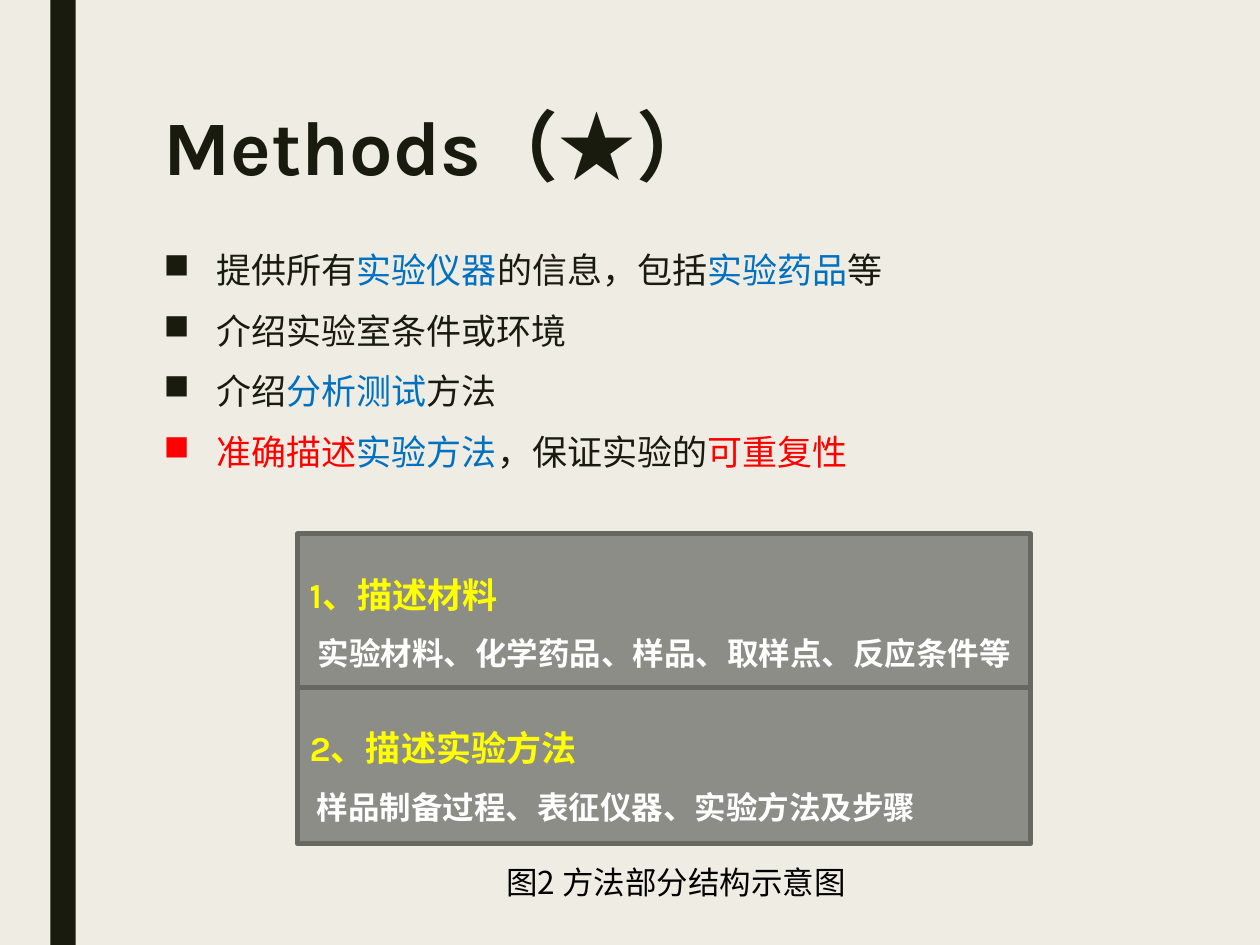
from dataclasses import dataclass

from pptx import Presentation
from pptx.dml.color import RGBColor
from pptx.enum import shapes, text
from pptx.oxml.ns import qn
from pptx.util import Inches, Pt


@dataclass(frozen=True)
class Theme:
    """Hold the colours, fonts and type sizes."""
    back: str = "EFEDE3"
    ink: str = "191B0E"
    blue: str = "0070C0"
    red: str = "FF0000"
    gold: str = "FFFF00"
    white: str = "FFFFFF"
    black: str = "000000"
    panel: str = "8C8D86"
    edge: str = "686863"
    latin: str = "Karla"
    han: str = "Noto Sans CJK SC"
    title: int = 44
    body: int = 20
    note: int = 18


T = Theme()
WIDE, HIGH = 10, 7.5
POINTS = [
    [("提供所有", T.ink), ("实验仪器", T.blue), ("的信息，包括", T.ink),
     ("实验药品", T.blue), ("等", T.ink)],
    [("介绍实验室条件或环境", T.ink)],
    [("介绍", T.ink), ("分析测试", T.blue), ("方法", T.ink)],
    [("准确描述", T.red), ("实验方法", T.blue), ("，保证实验的", T.ink),
     ("可重复性", T.red)],
]
PANELS = [
    ("1、描述材料", "实验材料、化学药品、样品、取样点、反应条件等", text.PP_ALIGN.CENTER),
    ("2、描述实验方法", " 样品制备过程、表征仪器、实验方法及步骤", text.PP_ALIGN.LEFT),
]


def span(x, y, w, h):
    """Turn shares of the slide into a box of lengths."""
    return [Inches(n) for n in (x * WIDE, y * HIGH, w * WIDE, h * HIGH)]


def style(run, size, tint, font=T.han, bold=False):
    """Format one run."""
    face = run.font
    face.size, face.bold, face.name = Pt(size), bold, font
    face.color.rgb = RGBColor.from_string(tint)
    east = run._r.get_or_add_rPr().makeelement(qn("a:ea"), {"typeface": T.han})
    face._element.find(qn("a:latin")).addnext(east)


def block(slide, box, fill, edge=None):
    """Draw a flat rectangle."""
    rect = slide.shapes.add_shape(shapes.MSO_SHAPE.RECTANGLE, *box)
    rect.shadow.inherit = False
    rect.fill.solid()
    rect.fill.fore_color.rgb = RGBColor.from_string(fill)
    if edge:
        rect.line.color.rgb = RGBColor.from_string(edge)
        rect.line.width = Pt(2.75)
    else:
        rect.line.fill.background()
    return rect


def label(slide, box):
    """Add a wrapping text box and return its frame."""
    frame = slide.shapes.add_textbox(*box).text_frame
    frame.word_wrap = True
    return frame


def bullet(para):
    """Give a paragraph a hanging square bullet."""
    props = para._p.get_or_add_pPr()
    props.set("marL", str(Inches(0.42)))
    props.set("indent", str(-Inches(0.42)))
    mark = props.makeelement(qn("a:buChar"), {"char": "■"})
    props.append(mark)


def head(slide, box):
    """Place the title."""
    para = label(slide, box).paragraphs[0]
    para.line_spacing = 0.89
    for words, font in (("Methods（", T.latin), ("★", T.han), ("）", T.latin)):
        run = para.add_run()
        run.text = words
        style(run, T.title, T.ink, font, True)


def points(slide, box):
    """Place the bulleted list."""
    frame = label(slide, box)
    for i, parts in enumerate(POINTS):
        para = frame.add_paragraph() if i else frame.paragraphs[0]
        para.line_spacing = 0.94
        para.space_before, para.space_after = Pt(10), Pt(2)
        bullet(para)
        for words, tint in parts:
            run = para.add_run()
            run.text = words
            style(run, T.body, tint)


def stack(slide, box):
    """Stack the panels in equal rows that share an edge."""
    left, top, width, height = box
    lap = Inches(0.02)
    row = (height + lap) // len(PANELS)
    for i, (name, more, align) in enumerate(PANELS):
        rect = block(slide, (left, top + i * (row - lap), width, row), T.panel, T.edge)
        frame = rect.text_frame
        frame.vertical_anchor = text.MSO_ANCHOR.MIDDLE
        frame.text = name + "\n" + more
        looks = ((text.PP_ALIGN.LEFT, T.body, T.gold), (align, T.note, T.white))
        for para, (side, size, tint) in zip(frame.paragraphs, looks):
            para.alignment, para.line_spacing = side, 1.5
            style(para.runs[0], size, tint, T.latin, True)


def caption(slide, box):
    """Place the figure caption."""
    frame = label(slide, box)
    frame.text = "图2 方法部分结构示意图"
    style(frame.paragraphs[0].runs[0], T.note, T.black)


def main():
    """Build and save the slide."""
    deck = Presentation()
    deck.slide_width, deck.slide_height = Inches(WIDE), Inches(HIGH)
    slide = deck.slides.add_slide(deck.slide_layouts[6])
    slide.background.fill.solid()
    slide.background.fill.fore_color.rgb = RGBColor.from_string(T.back)
    block(slide, span(0.04, 0, 0.02, 1), T.ink)
    head(slide, span(0.12, 0.11, 0.79, 0.22))
    points(slide, span(0.12, 0.26, 0.79, 0.3))
    stack(slide, span(0.236, 0.565, 0.582, 0.328))
    caption(slide, span(0.392, 0.907, 0.298, 0.053))
    deck.save("out.pptx")


if __name__ == "__main__":
    main()
